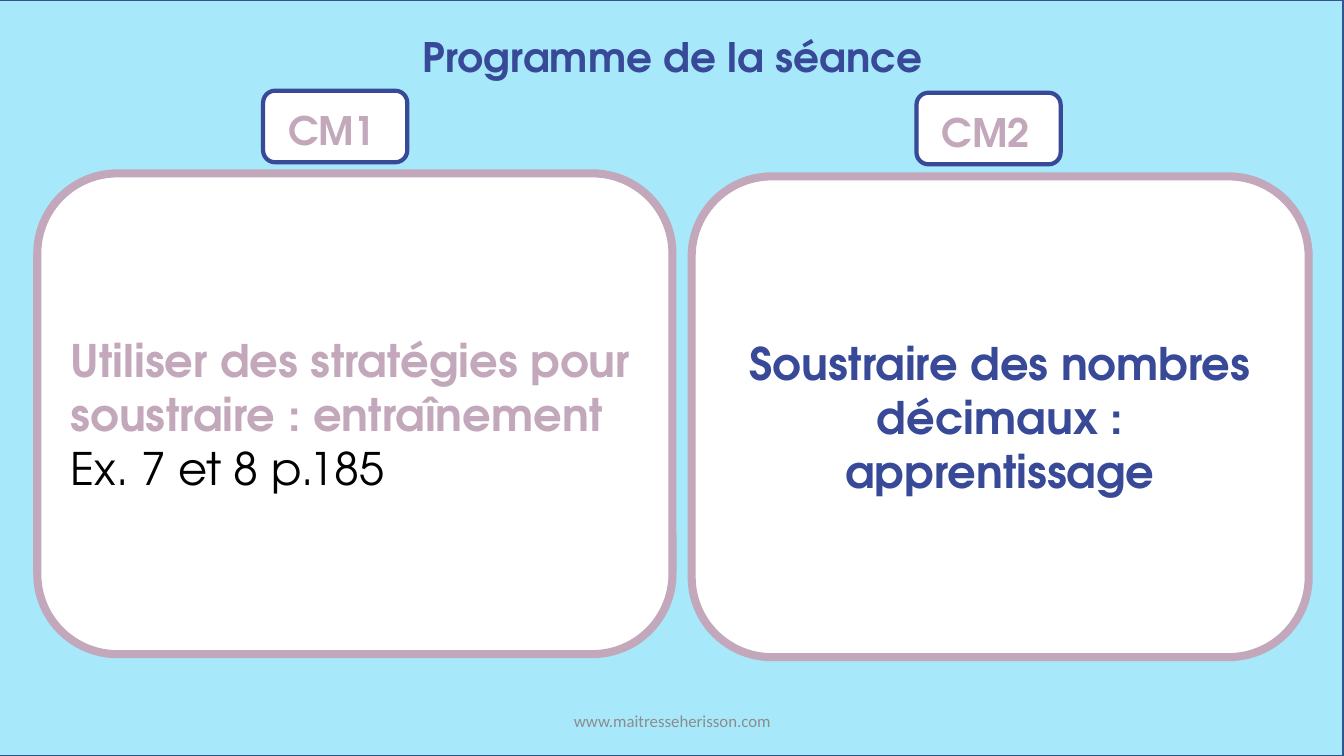
"""Build the lesson programme slide for the CM1 and CM2 classes."""
import dataclasses
import typing

import pptx
import pptx.dml.color
import pptx.enum.shapes
import pptx.enum.text
import pptx.util

Inches = pptx.util.Inches
Shapes = pptx.enum.shapes.MSO_SHAPE
Align = pptx.enum.text.PP_ALIGN
Anchor = pptx.enum.text.MSO_ANCHOR

COLORS = {
    "sky": "A7E8FB",
    "edge": "325491",
    "white": "FFFFFF",
    "navy": "374997",
    "mauve": "C3A7BA",
    "black": "000000",
    "grey": "8C8C8C",
}
DISPLAY_FONT = "TeX Gyre Adventor"


@dataclasses.dataclass(frozen=True)
class Line:
    text: str
    size: float
    color: str
    bold: bool = True
    font: str = DISPLAY_FONT
    align: Align = Align.LEFT


@dataclasses.dataclass(frozen=True)
class Frame:
    left: float
    top: float
    width: float
    height: float

    def lengths(self) -> list[int]:
        return [Inches(value) for value in dataclasses.astuple(self)]


@dataclasses.dataclass(frozen=True)
class Column:
    badge: Frame
    label: str
    panel: Frame
    lines: tuple[Line, ...]


COLUMNS = (
    Column(
        Frame(2.61, 0.9, 1.43, 0.71),
        "CM1",
        Frame(0.37, 1.72, 6.3, 4.77),
        (
            Line("Utiliser des stratégies pour soustraire : entraînement", 32, "mauve"),
            Line("Ex. 7 et 8 p.185", 32, "black", bold=False),
        ),
    ),
    Column(
        Frame(9.09, 0.92, 1.43, 0.71),
        "CM2",
        Frame(6.86, 1.75, 6.12, 4.77),
        (Line("Soustraire des nombres décimaux : apprentissage", 32, "navy", align=Align.CENTER),),
    ),
)


def rgb(name: str) -> pptx.dml.color.RGBColor:
    return pptx.dml.color.RGBColor.from_string(COLORS[name])


def set_all(target: typing.Any, values: dict[str, typing.Any]) -> None:
    for name, value in values.items():
        setattr(target, name, value)


def write(box: typing.Any, lines: tuple[Line, ...], anchor: Anchor) -> None:
    text_frame = box.text_frame
    set_all(text_frame, {"word_wrap": True, "vertical_anchor": anchor})
    for index, line in enumerate(lines):
        para = text_frame.add_paragraph() if index else text_frame.paragraphs[0]
        para.alignment = line.align
        span = para.add_run()
        span.text = line.text
        set_all(span.font, {"name": line.font, "size": pptx.util.Pt(line.size), "bold": line.bold})
        span.font.color.rgb = rgb(line.color)


def add_box(page: typing.Any, kind: Shapes, frame: Frame, fill: str, edge: str, weight: float) -> typing.Any:
    box = page.shapes.add_shape(kind, *frame.lengths())
    box.shadow.inherit = False
    box.fill.solid()
    box.fill.fore_color.rgb = rgb(fill)
    box.line.color.rgb = rgb(edge)
    box.line.width = pptx.util.Pt(weight)
    return box


def add_text(page: typing.Any, frame: Frame, line: Line, anchor: Anchor = Anchor.TOP) -> None:
    write(page.shapes.add_textbox(*frame.lengths()), (line,), anchor)


def add_column(page: typing.Any, column: Column) -> None:
    badge = column.badge
    add_box(page, Shapes.ROUNDED_RECTANGLE, badge, "white", "navy", 3)
    label_frame = Frame(badge.left + 0.15, badge.top + 0.11, 1.1, 0.57)
    add_text(page, label_frame, Line(column.label, 28, "mauve"))
    panel = add_box(page, Shapes.ROUNDED_RECTANGLE, column.panel, "white", "mauve", 5.75)
    write(panel, column.lines, Anchor.MIDDLE)


def main() -> None:
    deck = pptx.Presentation()
    set_all(deck, {"slide_width": Inches(13.33), "slide_height": Inches(7.5)})
    page = deck.slides.add_slide(deck.slide_layouts[6])
    add_box(page, Shapes.RECTANGLE, Frame(-0.01, 0, 13.33, 7.5), "sky", "edge", 1)
    add_text(page, Frame(0.01, 0.27, 13.33, 0.59), Line("Programme de la séance", 29, "navy", align=Align.CENTER))
    for column in COLUMNS:
        add_column(page, column)
    footer = Line("www.maitresseherisson.com", 12, "grey", False, "Calibri", Align.CENTER)
    add_text(page, Frame(4.42, 6.95, 4.5, 0.4), footer, Anchor.MIDDLE)
    deck.save("out.pptx")


if __name__ == "__main__":
    main()
